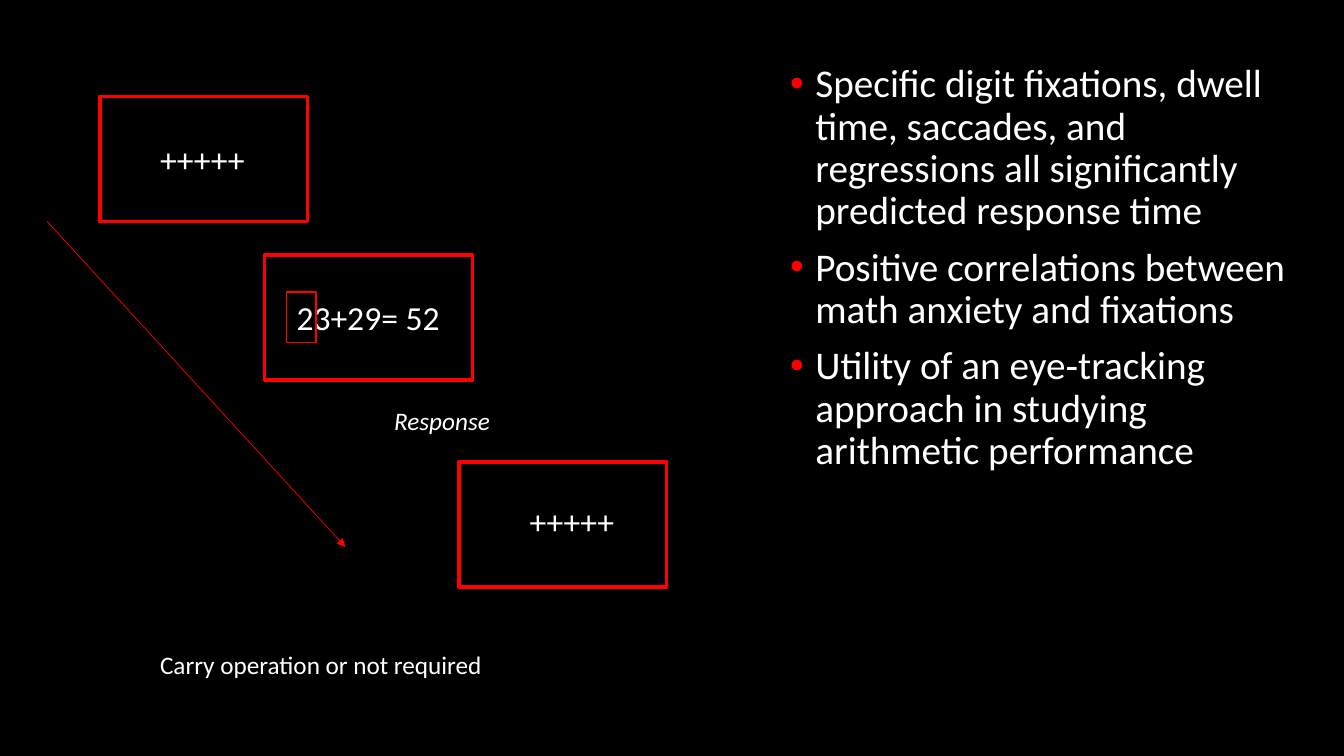
from lxml import etree
from pptx import Presentation
from pptx import util as u
from pptx.dml.color import RGBColor
from pptx.enum import shapes, text
from pptx.oxml import ns

BLACK = RGBColor(0, 0, 0)
WHITE = RGBColor(255, 255, 255)
RED = RGBColor(255, 0, 0)
FONT = "Calibri"

FRAME_WIDTH, FRAME_HEIGHT = 198, 119
FRAME_CORNERS = [(95, 92), (252, 243), (437, 440)]
FINDINGS = [
    "Specific digit fixations, dwell time, saccades, and regressions all "
    "significantly predicted response time",
    "Positive correlations between math anxiety and fixations",
    "Utility of an eye‐tracking approach in studying arithmetic performance",
]


def px(length):
    return u.Emu(length * 9525)


def add_child(parent, tag, **attributes):
    return etree.SubElement(parent, ns.qn(tag), attributes)


def write(para, words, size=24, italic=None):
    span = para.add_run()
    span.text = words
    span.font.name = FONT
    span.font.size = u.Pt(size)
    span.font.italic = italic
    span.font.color.rgb = WHITE


def add_label(page, words, left, top, width, height, **form):
    box = page.shapes.add_textbox(px(left), px(top), px(width), px(height))
    box.text_frame.word_wrap = False
    box.text_frame.auto_size = text.MSO_AUTO_SIZE.SHAPE_TO_FIT_TEXT
    write(box.text_frame.paragraphs[0], words, **form)


def add_frame(page, left, top, width, height, weight):
    frame = page.shapes.add_shape(
        shapes.MSO_SHAPE.RECTANGLE, px(left), px(top), px(width), px(height))
    frame.shadow.inherit = False
    frame.fill.background()
    frame.line.color.rgb = RED
    frame.line.width = u.Pt(weight)


def add_arrow(page, left, top, right, bottom):
    arrow = page.shapes.add_connector(
        shapes.MSO_CONNECTOR.STRAIGHT, px(left), px(top), px(right), px(bottom))
    arrow.line.color.rgb = RED
    arrow.line.width = u.Pt(0.5)
    add_child(arrow.line._get_or_add_ln(), "a:tailEnd", type="triangle")
    add_child(arrow._element.spPr, "a:effectLst")


def add_red_bullet(para):
    props = para._p.get_or_add_pPr()
    props.set("marL", str(px(24)))
    props.set("indent", str(px(-24)))
    add_child(add_child(props, "a:buClr"), "a:srgbClr", val=str(RED))
    add_child(props, "a:buFont", typeface="Arial")
    add_child(props, "a:buChar", char="•")


def fill_findings(body):
    body.left, body.top, body.width, body.height = map(px, (743, 56, 505, 592))
    frame = body.text_frame
    for number, finding in enumerate(FINDINGS):
        para = frame.add_paragraph() if number else frame.paragraphs[0]
        para.line_spacing = 0.9
        para.space_before = u.Pt(10)
        add_red_bullet(para)
        write(para, finding, size=28)


def main():
    deck = Presentation()
    deck.slide_width, deck.slide_height = px(1280), px(720)
    page = deck.slides.add_slide(deck.slide_layouts[1])
    page.background.fill.solid()
    page.background.fill.fore_color.rgb = BLACK

    title = page.shapes.title._element
    title.getparent().remove(title)
    fill_findings(page.placeholders[1])

    for left, top in FRAME_CORNERS:
        add_frame(page, left, top, FRAME_WIDTH, FRAME_HEIGHT, weight=2.5)
    add_label(page, "+++++", 143, 128, 101, 48)
    add_label(page, "23+29= 52", 273, 278, 156, 48)
    add_label(page, "Response", 366, 381, 113, 38, size=18, italic=True)
    add_label(page, "+++++", 495, 472, 101, 48)
    add_frame(page, 273, 278, 28, 48, weight=1)
    add_arrow(page, 45, 211, 329, 521)
    add_label(page, "Carry operation or not required", 143, 614, 329, 38, size=18)

    deck.save("out.pptx")


if __name__ == "__main__":
    main()
